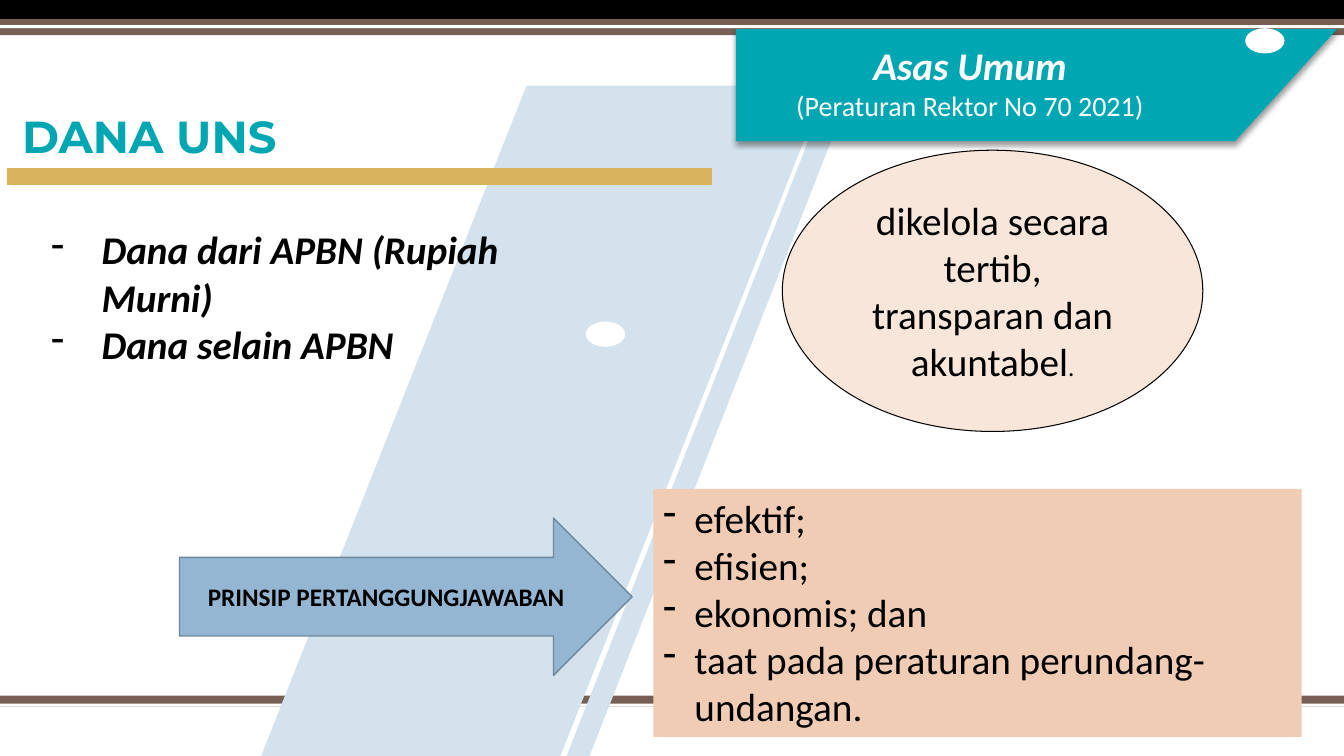
from lxml import etree
from pptx import Presentation
from pptx.dml.color import RGBColor
from pptx.enum.shapes import MSO_SHAPE
from pptx.enum.text import MSO_ANCHOR, PP_ALIGN
from pptx.oxml import parse_xml
from pptx.oxml.ns import qn
from pptx.util import Inches, Pt

RECTANGLE, OVAL = MSO_SHAPE.RECTANGLE, MSO_SHAPE.OVAL
PARALLELOGRAM, ARROW = MSO_SHAPE.PARALLELOGRAM, MSO_SHAPE.RIGHT_ARROW
PROCESS, CONNECTOR = MSO_SHAPE.FLOWCHART_PROCESS, MSO_SHAPE.FLOWCHART_CONNECTOR
TOP, MIDDLE, BOTTOM = MSO_ANCHOR.TOP, MSO_ANCHOR.MIDDLE, MSO_ANCHOR.BOTTOM
LEFT, CENTER = PP_ALIGN.LEFT, PP_ALIGN.CENTER

COLORS = {
    "black": "000000", "white": "FFFFFF", "brown": "775F55",
    "pale_blue": "D4E2ED", "teal": "00A6B2", "gold": "D8B25C",
    "cream": "F8E6DA", "peach": "F1CCB5", "blue": "94B6D2", "slate": "6D879B",
}

deck = Presentation()
deck.slide_width, deck.slide_height = Inches(13.33), Inches(7.5)
page = deck.slides.add_slide(deck.slide_layouts[6])


def draw(kind, place, fill, line=None, width=1):
    shape = page.shapes.add_shape(kind, *map(Inches, place))
    shape.shadow.inherit = False
    shape.fill.solid()
    shape.fill.fore_color.rgb = RGBColor.from_string(COLORS[fill])
    if line:
        shape.line.color.rgb = RGBColor.from_string(COLORS[line])
        shape.line.width = Pt(width)
    else:
        shape.line.fill.background()
    return shape


def write(box, paragraphs, color="black", align=LEFT, anchor=TOP, indent=0, spacing=None):
    frame = box.text_frame
    frame.word_wrap = True
    frame.vertical_anchor = anchor
    for index, spans in enumerate(paragraphs):
        para = frame.paragraphs[0] if index == 0 else frame.add_paragraph()
        para.alignment = align
        para.line_spacing = spacing
        if indent:
            properties = para._p.get_or_add_pPr()
            properties.set("marL", str(Inches(indent)))
            properties.set("indent", str(-Inches(indent)))
            etree.SubElement(properties, qn("a:buChar")).set("char", "-")
        for text, style in spans:
            span = para.add_run()
            span.text = text
            span.font.color.rgb = RGBColor.from_string(COLORS[color])
            for name, value in style.items():
                setattr(span.font, name, value)


BODY = {"name": "Calibri", "size": Pt(28)}
STRONG = {**BODY, "bold": True, "italic": True}
SMALL = {**BODY, "size": Pt(20)}
STOP = {**BODY, "size": Pt(18)}
LABEL = {**STOP, "bold": True}
TITLE = {"name": "Montserrat", "size": Pt(32), "bold": True}

for top, height, fill in [
    (6.9, 0.11, "brown"), (6.98, 0.03, "white"),
    (0, 0.19, "black"), (0.19, 0.16, "brown"), (0.25, 0.03, "white"),
]:
    draw(RECTANGLE, (0, top, 13.33, height), fill)

for left, width, slant in [(5.62, 2.84, 0.92), (2.59, 5.6, 0.47)]:
    band = draw(PARALLELOGRAM, (left, 0.85, width, 6.65), "pale_blue")
    band.adjustments[0] = slant

title = page.shapes.add_textbox(*map(Inches, (0.12, 0.71, 6.15, 0.96)))
write(title, [[("DANA UNS", TITLE)]], color="teal", anchor=BOTTOM, spacing=0.9)
draw(PROCESS, (0.07, 1.67, 6.99, 0.17), "gold")

principle = draw(CONNECTOR, (7.76, 1.49, 4.17, 2.79), "cream", "black", 0.75)
write(principle, [[("dikelola secara tertib, transparan dan akuntabel", BODY), (".", STOP)]], align=CENTER)

outline = page.shapes.build_freeform(Inches(7.3), Inches(0.29))
outline.add_line_segments(
    [(Inches(x), Inches(y)) for x, y in [(13.26, 0.29), (12.25, 1.4), (7.3, 1.4)]], close=True
)
banner = outline.convert_to_shape()
banner.fill.solid()
banner.fill.fore_color.rgb = RGBColor.from_string(COLORS["teal"])
banner.line.fill.background()
banner._element.spPr.append(parse_xml(
    '<a:effectLst xmlns:a="http://schemas.openxmlformats.org/drawingml/2006/main">'
    f'<a:outerShdw blurRad="{Pt(4)}" dist="{Pt(3)}" dir="5400000" rotWithShape="0">'
    f'<a:srgbClr val="{COLORS["black"]}"><a:alpha val="40000"/></a:srgbClr>'
    "</a:outerShdw></a:effectLst>"
))

heading = page.shapes.add_textbox(*map(Inches, (7.14, 0.36, 4.96, 0.91)))
write(
    heading,
    [[("Asas Umum", STRONG)], [("(Peraturan Rektor No 70 2021)", SMALL)]],
    color="white", align=CENTER,
)

sources = page.shapes.add_textbox(*map(Inches, (0.41, 2.19, 4.79, 1.51)))
write(
    sources,
    [[(text, STRONG)] for text in ("Dana dari APBN (Rupiah Murni)", "Dana selain APBN")],
    indent=0.5,
)

for left, top in [(12.35, 0.28), (5.81, 3.19)]:
    draw(OVAL, (left, top, 0.39, 0.25), "white")

arrow = draw(ARROW, (1.78, 5.14, 4.49, 1.56), "blue", "slate")
write(arrow, [[("PRINSIP PERTANGGUNGJAWABAN", LABEL)]], align=CENTER, anchor=MIDDLE)

criteria = draw(RECTANGLE, (6.48, 4.85, 6.43, 2.46), "peach")
write(
    criteria,
    [[(text, BODY)] for text in (
        "efektif;", "efisien;", "ekonomis; dan", "taat pada peraturan perundang-undangan.",
    )],
    indent=0.31,
)

deck.save("out.pptx")
